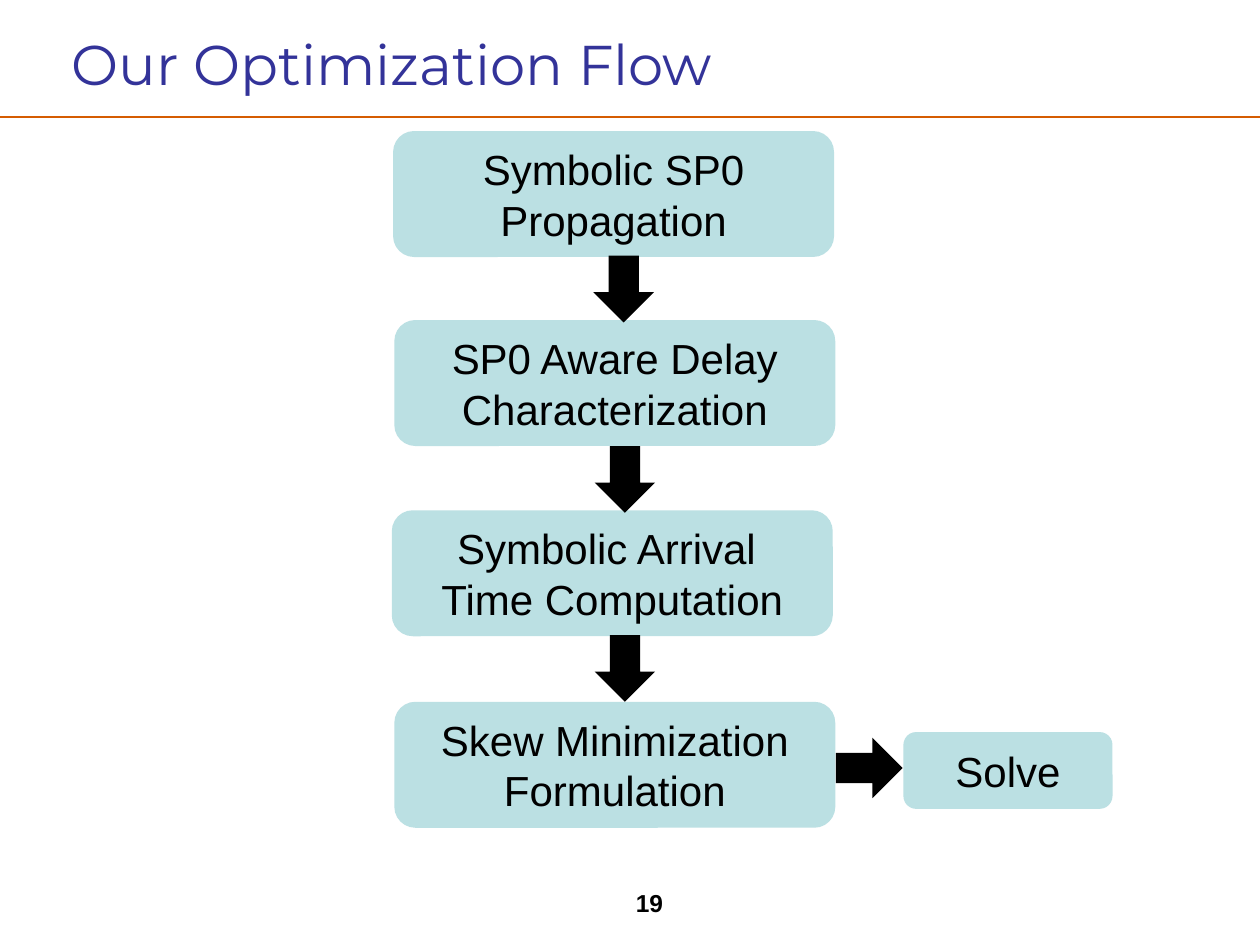
"""Build a slide that shows an optimization flow as boxes joined by arrows."""
from dataclasses import dataclass

from lxml import etree
from pptx import Presentation
from pptx.dml.color import RGBColor
from pptx.enum import shapes, text
from pptx.oxml.ns import qn
from pptx.util import Emu, Pt

PX = 9144
BLACK = RGBColor(0x00, 0x00, 0x00)
BLUE = RGBColor(0x33, 0x33, 0x99)
TEAL = RGBColor(0xBB, 0xE0, 0xE3)
RUST = RGBColor(0xD5, 0x5C, 0x01)
KIND = shapes.MSO_SHAPE
ALIGN = text.PP_ALIGN
ANCHOR = text.MSO_ANCHOR


@dataclass(frozen=True)
class Box:
    label: str
    x: int
    y: int
    w: int = 350
    h: int = 100


@dataclass(frozen=True)
class Arrow:
    x: int
    y: int
    turn: int = 0


BOXES = [
    Box("Symbolic SP0\nPropagation", 312, 104),
    Box("SP0 Aware Delay\nCharacterization", 313, 254),
    Box("Symbolic Arrival \nTime Computation", 311, 405),
    Box("Skew Minimization Formulation", 313, 557),
    Box("Solve", 717, 581, 166, 61),
]
ARROWS = [Arrow(471, 203), Arrow(472, 354), Arrow(472, 504), Arrow(666, 583, 270)]


def px(*sizes: int) -> list[Emu]:
    return [Emu(size * PX) for size in sizes]


def write(shape, words: str, face: str, size: int, color: RGBColor,
          align=ALIGN.CENTER, anchor=ANCHOR.MIDDLE, bold: bool = False) -> None:
    frame = shape.text_frame
    frame.text = words
    frame.word_wrap = True
    frame.auto_size = text.MSO_AUTO_SIZE.NONE
    frame.vertical_anchor = anchor
    for para in frame.paragraphs:
        para.alignment = align
        font = para.font
        font.name, font.size, font.bold = face, Pt(size), bold
        font.color.rgb = color


def draw(slide, kind, color: RGBColor, x: int, y: int, w: int, h: int):
    shape = slide.shapes.add_shape(kind, *px(x, y, w, h))
    shape.shadow.inherit = False
    shape.fill.solid()
    shape.fill.fore_color.rgb = color
    shape.line.fill.background()
    return shape


def add_box(slide, box: Box) -> None:
    shape = draw(slide, KIND.ROUNDED_RECTANGLE, TEAL, box.x, box.y, box.w, box.h)
    write(shape, box.label, "Arial", 24, BLACK)


def add_arrow(slide, arrow: Arrow) -> None:
    shape = draw(slide, KIND.DOWN_ARROW, BLACK, arrow.x, arrow.y, 48, 53)
    shape.rotation = arrow.turn


def add_rule(slide) -> None:
    rule = slide.shapes.add_connector(shapes.MSO_CONNECTOR.STRAIGHT, *px(0, 93, 1000, 93))
    rule.line.color.rgb = RUST
    rule.line.width = Pt(1)
    etree.SubElement(rule._element.spPr, qn("a:effectLst"))


def main() -> None:
    deck = Presentation()
    deck.slide_width, deck.slide_height = px(1000, 750)
    slide = deck.slides.add_slide(deck.slide_layouts[5])
    add_rule(slide)
    title = slide.shapes.title
    title.left, title.top, title.width, title.height = px(47, 11, 905, 78)
    write(title, "Our Optimization Flow", "Montserrat", 32, BLUE, ALIGN.LEFT)
    page = slide.shapes.add_textbox(*px(399, 700, 233, 40))
    write(page, "19", "Arial", 14, BLACK, anchor=ANCHOR.TOP, bold=True)
    for box in BOXES:
        add_box(slide, box)
    for arrow in ARROWS:
        add_arrow(slide, arrow)
    deck.save("out.pptx")


if __name__ == "__main__":
    main()
